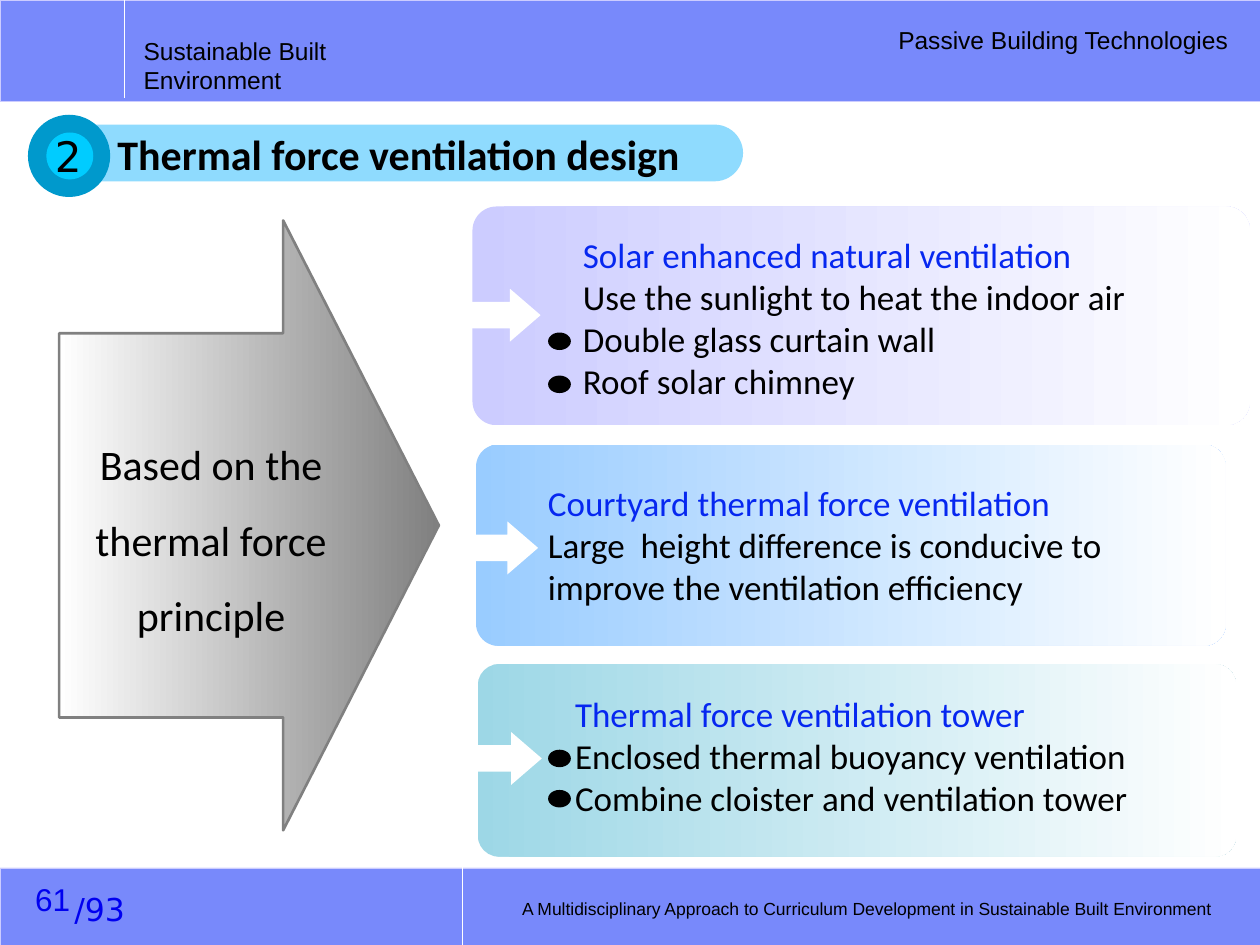
"""Build the slide on thermal force ventilation design."""
import lxml.etree
import pptx
import pptx.dml.color
import pptx.enum.shapes
import pptx.enum.text
import pptx.oxml.ns
import pptx.util

Pt = pptx.util.Pt
RGB = pptx.dml.color.RGBColor.from_string
SHAPE = pptx.enum.shapes.MSO_SHAPE
ALIGN = pptx.enum.text.PP_ALIGN
ANCHOR = pptx.enum.text.MSO_ANCHOR

THEME = {
    "color": {
        "band": "7889FB", "band_line": "CCCCFF", "white": "FFFFFF", "black": "000000",
        "title_bar": "8FDBFE", "ring": "0099CC", "disc": "00CCFF", "grey": "808080",
        "lilac": "CCCCFF", "sky": "99CCFF", "teal": "9DD7E6",
        "heading": "0627F0", "number": "0000F0",
    },
    "size": {"title": 24, "body": 20, "number": 18, "header": 14, "footer": 10},
}
COLOR = {name: RGB(value) for name, value in THEME["color"].items()}
SIZE = {name: Pt(value) for name, value in THEME["size"].items()}

deck = pptx.Presentation()
deck.slide_width, deck.slide_height = Pt(720), Pt(540)
page = deck.slides.add_slide(deck.slide_layouts[6])


def put_shape(kind, bounds, colors, adjustments=(), line=None, line_width=0):
    shape = page.shapes.add_shape(kind, *map(Pt, bounds))
    shape.shadow.inherit = False
    for index, value in enumerate(adjustments):
        shape.adjustments[index] = value
    if len(colors) == 1:
        shape.fill.solid()
        shape.fill.fore_color.rgb = COLOR[colors[0]]
    else:
        shape.fill.gradient()
        shape.fill.gradient_angle = 0
        for stop, name in zip(shape.fill.gradient_stops, colors):
            stop.color.rgb = COLOR[name]
    if line:
        shape.line.color.rgb = COLOR[line]
        shape.line.width = Pt(line_width)
    else:
        shape.line.fill.background()


def put_text(bounds, lines, size, face, align=ALIGN.LEFT, anchor=ANCHOR.TOP, bold=False, spacing=None):
    frame = page.shapes.add_textbox(*map(Pt, bounds)).text_frame
    frame_format = {"word_wrap": True, "vertical_anchor": anchor}
    for name, value in frame_format.items():
        setattr(frame, name, value)
    for index, (words, color) in enumerate(lines):
        para = frame.add_paragraph() if index else frame.paragraphs[0]
        para_format = {"alignment": align, "line_spacing": spacing}
        for name, value in para_format.items():
            setattr(para, name, value)
        span = para.add_run()
        span.text = words
        span_format = {"size": SIZE[size], "name": face, "bold": bold}
        for name, value in span_format.items():
            setattr(span.font, name, value)
        span.font.color.rgb = COLOR[color]


for band in [(0, 496, 720, 44), (0, 0, 720, 58)]:
    put_shape(SHAPE.RECTANGLE, band, ["band"], line="band_line", line_width=0.25)
for x, top, bottom in [(71.3, 0, 56), (264.2, 495.5, 540)]:
    divider = page.shapes.add_connector(
        pptx.enum.shapes.MSO_CONNECTOR.STRAIGHT, Pt(x), Pt(top), Pt(x), Pt(bottom))
    divider.line.color.rgb = COLOR["white"]
    divider.line.width = Pt(0.75)
    lxml.etree.SubElement(divider._element.spPr, pptx.oxml.ns.qn("a:effectLst"))

put_text((75, 17, 150, 40), [("Sustainable Built Environment", "black")], "header", "Arial")
put_text((504, 11, 205, 31), [("Passive Building Technologies", "black")], "header", "Arial", ALIGN.RIGHT)
put_text((19.5, 505, 59, 29), [("/93", "number")], "number", "DejaVu Sans", ALIGN.RIGHT)
put_text((13, 499, 60, 29), [("61", "number")], "number", "Arial", anchor=ANCHOR.MIDDLE)
put_text((270, 509, 429, 20),
         [("A Multidisciplinary Approach to Curriculum Development in Sustainable Built Environment", "black")],
         "footer", "Arial", ALIGN.RIGHT, ANCHOR.MIDDLE)

put_shape(SHAPE.ROUNDED_RECTANGLE, (26.6, 71.2, 398, 32.4), ["title_bar"], [0.5])
put_shape(SHAPE.DONUT, (16, 65.6, 47, 47), ["ring"], [0.25])
put_shape(SHAPE.OVAL, (26.5, 75.7, 26.8, 26.8), ["disc"])
put_text((60, 70, 450, 36), [("Thermal force ventilation design", "black")], "title", "Calibri", bold=True)
put_text((19, 71.3, 40, 36), [("2", "black")], "title", "DejaVu Sans", ALIGN.CENTER)

put_shape(SHAPE.RIGHT_ARROW, (33.8, 126, 217, 348.5), ["white", "grey"], [0.63, 0.41], "grey", 1.5)
put_text((32.4, 232.6, 176.4, 137), [("Based on the thermal force principle", "black")],
         "title", "Calibri", ALIGN.CENTER, spacing=1.5)

panels = [
    ("lilac", (270, 118, 444.3, 125), (267.1, 165), (326, 129.6, 370, 110),
     ["Solar enhanced natural ventilation", "Use the sunlight to heat the indoor air",
      "Double glass curtain wall", "Roof solar chimney"]),
    ("sky", (272, 254, 428.4, 115), (265.7, 298), (306, 271.4, 393, 79),
     ["Courtyard thermal force ventilation",
      "Large  height difference is conducive to improve the ventilation efficiency"]),
    ("teal", (273, 379.5, 433.4, 110), (267.8, 418.3), (321.5, 392.4, 364, 80),
     ["Thermal force ventilation tower", "Enclosed thermal buoyancy ventilation",
      "Combine cloister and ventilation tower"]),
]
for tint, panel, arrow, text_area, (heading, *details) in panels:
    put_shape(SHAPE.ROUNDED_RECTANGLE, panel, [tint, "white"], [0.11])
    put_shape(SHAPE.RIGHT_ARROW, (*arrow, 41.8, 30.2), ["white"], [0.5, 0.58])
    put_text(text_area, [(heading, "heading")] + [(detail, "black") for detail in details], "body", "Calibri")

for top in [190, 214.6, 428.4, 451.4]:
    put_shape(SHAPE.OVAL, (313.2, top, 13, 10), ["black"])

deck.save("out.pptx")
